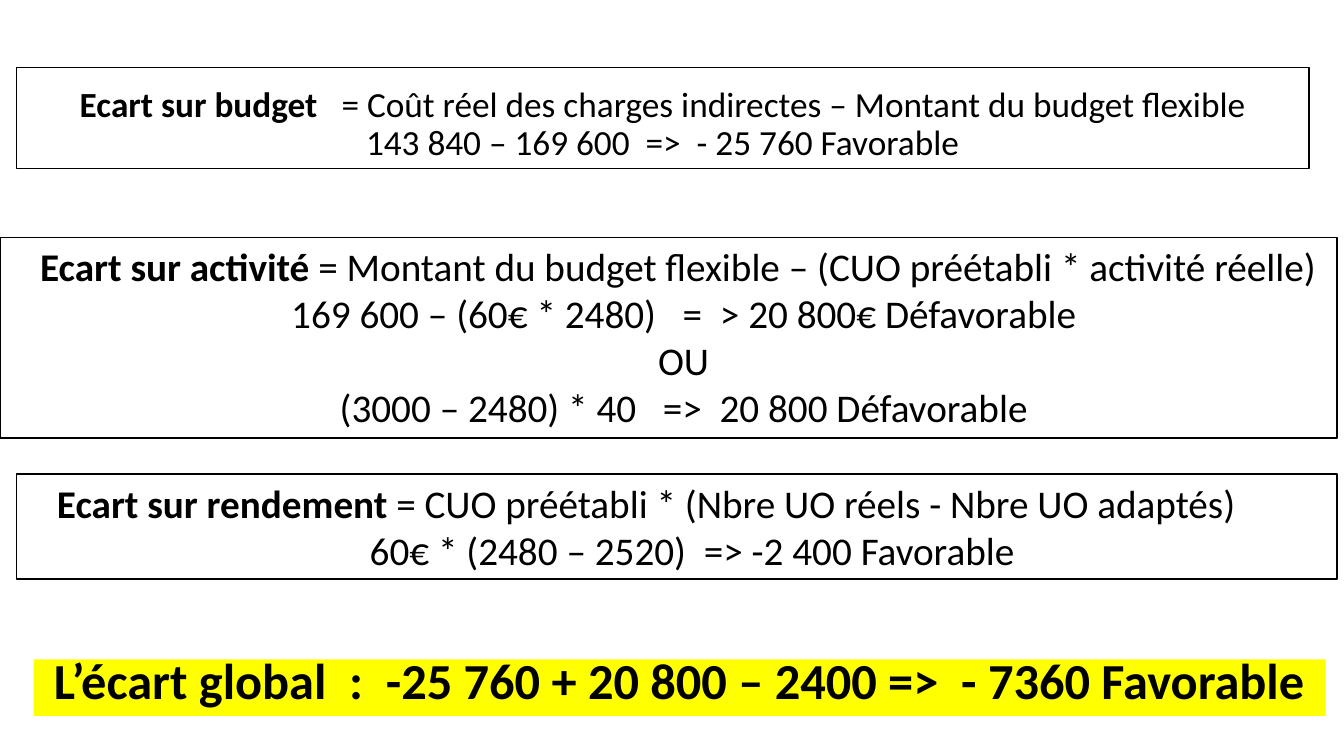
from pptx import Presentation
from pptx.dml.color import RGBColor
from pptx.enum.text import MSO_ANCHOR as ANCHOR, MSO_AUTO_SIZE as AUTO, PP_ALIGN as ALIGN
from pptx.util import Pt

COLORS = {"text": "000000", "line": "000000", "box": "FFFFFF", "highlight": "FFFF00"}


def style_box(sp, fill, outlined=True):
    sp.fill.solid()
    sp.fill.fore_color.rgb = RGBColor.from_string(COLORS[fill])
    if outlined:
        sp.line.color.rgb = RGBColor.from_string(COLORS["line"])
        sp.line.width = Pt(1)


def write_lines(tf, label, lines, size, first_align=ALIGN.CENTER, spacing=None, indent=0):
    """Bold label followed by the formula, then one centred paragraph per line."""
    tf.word_wrap = True
    for i, line in enumerate(lines):
        p = tf.paragraphs[0] if i == 0 else tf.add_paragraph()
        p.alignment = ALIGN.CENTER if i else first_align
        if spacing:
            p.line_spacing = spacing
        if indent:
            p._p.get_or_add_pPr().set("marL", str(Pt(indent)))
        for text, bold in ((label if i == 0 else "", True), (line, False)):
            if text:
                r = p.add_run()
                r.text = text
                r.font.name = "Calibri"
                r.font.size = Pt(size)
                r.font.bold = bold
                r.font.color.rgb = RGBColor.from_string(COLORS["text"])


prs = Presentation()
prs.slide_width, prs.slide_height = Pt(960), Pt(540)
s = prs.slides.add_slide(prs.slide_layouts[0])
subtitle = s.placeholders[1]
subtitle.element.getparent().remove(subtitle.element)

# Budget variance (title)
title = s.shapes.title
title.left, title.top, title.width, title.height = Pt(12), Pt(48.4), Pt(923), Pt(72)
style_box(title, "box")
tf = title.text_frame
tf.auto_size = AUTO.NONE
tf.vertical_anchor = ANCHOR.BOTTOM
write_lines(tf, "Ecart sur budget   ", [
    "= Coût réel des charges indirectes – Montant du budget flexible",
    "143 840 – 169 600  =>  - 25 760 Favorable",
], 25.2, spacing=0.9)

# Overall variance
total = s.shapes.add_textbox(Pt(24), Pt(471), Pt(923), Pt(40.3))
style_box(total, "highlight", outlined=False)
total.text_frame.vertical_anchor = ANCHOR.BOTTOM
write_lines(total.text_frame,
            "L’écart global  :  -25 760 + 20 800 – 2400 =>  - 7360 Favorable",
            [""], 36, spacing=0.9)

# Activity and efficiency variances
variances = [
    (0, 169.5, 955, 143.4, "Ecart sur activité ", [
        "= Montant du budget flexible – (CUO préétabli * activité réelle)",
        "169 600 – (60€ * 2480)   =  > 20 800€ Défavorable",
        "OU",
        "(3000 – 2480) * 40   =>  20 800 Défavorable",
    ]),
    (12, 338.6, 943, 75, "Ecart sur rendement ", [
        "= CUO préétabli * (Nbre UO réels - Nbre UO adaptés)",
        "60€ * (2480 – 2520)  => -2 400 Favorable",
    ]),
]
for left, top, width, height, label, lines in variances:
    box = s.shapes.add_textbox(Pt(left), Pt(top), Pt(width), Pt(height))
    style_box(box, "box")
    box.text_frame.auto_size = AUTO.SHAPE_TO_FIT_TEXT
    write_lines(box.text_frame, label, lines, 28, first_align=ALIGN.LEFT, indent=21.6)

prs.save("out.pptx")
